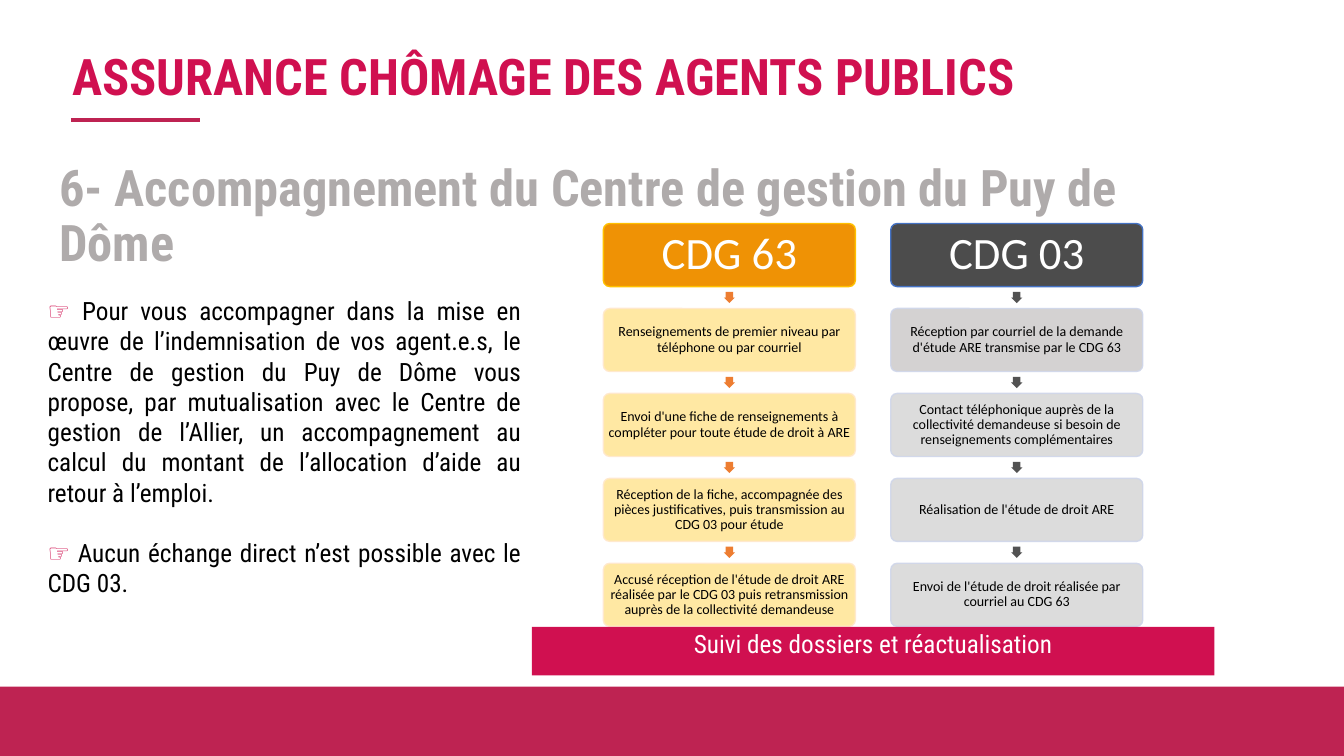
from pptx import Presentation
from pptx.dml.color import RGBColor
from pptx.enum.shapes import MSO_CONNECTOR as CONN, MSO_SHAPE as SHAPE
from pptx.enum.text import MSO_ANCHOR as ANCHOR, MSO_AUTO_SIZE as AUTO, PP_ALIGN as ALIGN
from pptx.oxml.ns import qn
from pptx.util import Pt
from lxml.etree import SubElement

WHITE = RGBColor(0xFF, 0xFF, 0xFF)
BLACK = RGBColor(0, 0, 0)
CRIMSON = RGBColor(0xD0, 0x10, 0x50)
BURGUNDY = RGBColor(0xBE, 0x23, 0x52)
SILVER = RGBColor(0xAF, 0xAB, 0xAB)
ORANGE = RGBColor(0xEF, 0x92, 0x05)
GOLD = RGBColor(0xFF, 0xC0, 0x00)
RUST = RGBColor(0xED, 0x7D, 0x31)
YELLOW = RGBColor(0xFF, 0xE6, 0x99)
CREAM = RGBColor(0xFF, 0xE8, 0xCC)
CHARCOAL = RGBColor(0x4C, 0x4C, 0x4C)
BLUE = RGBColor(0x44, 0x72, 0xC4)
GRAPHITE = RGBColor(0x52, 0x52, 0x52)
ASH = RGBColor(0xD0, 0xCE, 0xCE)
GREY = RGBColor(0xD9, 0xD9, 0xD9)
MIST = RGBColor(0xCF, 0xD6, 0xEA)

ROBOTO = "Roboto Condensed"
HEADING = dict(name=ROBOTO, size=Pt(36), bold=True)
BODY = dict(name=ROBOTO, size=Pt(18))
HEAD = dict(name="Calibri", size=Pt(32))
STEP = dict(name="Calibri", size=Pt(10))
TIGHT = dict(line_spacing=0.9, space_before=Pt(0))

CDG_63 = dict(
    head="CDG 63", head_fill=ORANGE, head_line=GOLD, arrow=RUST, line=CREAM,
    steps=[
        ("Renseignements de premier niveau par téléphone ou par courriel", YELLOW),
        ("Envoi d'une fiche de renseignements à compléter pour toute étude de droit à ARE", YELLOW),
        ("Réception de la fiche, accompagnée des pièces justificatives, puis transmission au "
         "CDG 03 pour étude", YELLOW),
        ("Accusé réception de l'étude de droit ARE réalisée par le CDG 03 puis retransmission "
         "auprès de la collectivité demandeuse", YELLOW),
    ])
CDG_03 = dict(
    head="CDG 03", head_fill=CHARCOAL, head_line=BLUE, arrow=GRAPHITE, line=MIST,
    steps=[
        ("Réception par courriel de la demande d'étude ARE transmise par le CDG 63", ASH),
        ("Contact téléphonique auprès de la collectivité demandeuse si besoin de "
         "renseignements complémentaires", GREY),
        ("Réalisation de l'étude de droit ARE", GREY),
        ("Envoi de l'étude de droit réalisée par courriel au CDG 63", GREY),
    ])
SUPPORT = [
    "Pour vous accompagner dans la mise en œuvre de l’indemnisation de vos agent.e.s, le Centre "
    "de gestion du Puy de Dôme vous propose, par mutualisation avec le Centre de gestion de "
    "l’Allier, un accompagnement au calcul du montant de l’allocation d’aide au retour à l’emploi.",
    "Aucun échange direct n’est possible avec le CDG 03.",
]


def assign(target, values):
    for key, value in values.items():
        setattr(target, key, value)


def place(sp, box):
    assign(sp, dict(zip(("left", "top", "width", "height"), map(Pt, box))))


def add_run(p, text, font, color):
    r = p.add_run()
    r.text = text
    assign(r.font, font)
    r.font.color.rgb = color


def write(sp, text, font, color, align=ALIGN.LEFT, anchor=ANCHOR.TOP):
    tf = sp.text_frame
    assign(tf, dict(word_wrap=True, auto_size=AUTO.NONE, vertical_anchor=anchor))
    p = tf.paragraphs[0]
    assign(p, dict(TIGHT, alignment=align))
    add_run(p, text, font, color)


def add_block(s, kind, box, fill, line=None, alpha=None):
    sp = s.shapes.add_shape(kind, *map(Pt, box))
    sp.shadow.inherit = False
    sp.fill.solid()
    sp.fill.fore_color.rgb = fill
    if line is None:
        sp.line.fill.background()
    else:
        sp.line.color.rgb = line
        sp.line.width = Pt(1)
    if alpha:
        for clr in sp._element.spPr.iter(qn("a:srgbClr")):
            SubElement(clr, qn("a:alpha")).set("val", str(alpha * 1000))
    return sp


def add_heading(s, box):
    x, y, w, h = box
    title = s.shapes.title
    place(title, box)
    write(title, "ASSURANCE CHÔMAGE DES AGENTS PUBLICS", HEADING, CRIMSON)
    rule = s.shapes.add_connector(CONN.STRAIGHT, Pt(x + 6), Pt(y + 52), Pt(x + 98.5), Pt(y + 52))
    rule.line.color.rgb = BURGUNDY
    rule.line.width = Pt(3)
    SubElement(rule._element.spPr, qn("a:effectLst"))


def add_subtitle(s, box):
    sp = s.shapes.add_textbox(*map(Pt, box))
    write(sp, "6- Accompagnement du Centre de gestion du Puy de Dôme", HEADING, SILVER)


def add_support(s, box):
    body = s.placeholders[1]
    place(body, box)
    tf = body.text_frame
    assign(tf, dict(word_wrap=True, auto_size=AUTO.NONE, vertical_anchor=ANCHOR.TOP))
    for i, text in enumerate(SUPPORT):
        p = tf.add_paragraph() if i else tf.paragraphs[0]
        pPr = p._p.get_or_add_pPr()
        pPr.set("marL", "0")
        pPr.set("indent", "0")
        SubElement(pPr, qn("a:buNone"))
        assign(p, dict(alignment=ALIGN.JUSTIFY, space_before=Pt(21.6 if i else 0)))
        add_run(p, "☞ ", BODY, CRIMSON)
        add_run(p, text, BODY, BLACK)


def add_card(s, box, text, font, color, fill, line, inset, alpha=None):
    sp = add_block(s, SHAPE.ROUNDED_RECTANGLE, box, fill, line, alpha)
    sp.adjustments[0] = 0.1
    sides = ("margin_left", "margin_top", "margin_right", "margin_bottom")
    assign(sp.text_frame, dict.fromkeys(sides, Pt(inset)))
    write(sp, text, font, color, ALIGN.CENTER, ANCHOR.MIDDLE)


def add_chain(s, box, chain):
    x, y, w, h = box
    card_h, arrow = 45, 8
    pitch = (h - card_h) / len(chain["steps"])
    add_card(s, (x, y, w, card_h), chain["head"], HEAD, WHITE,
             chain["head_fill"], chain["head_line"], 2.9)
    for i, (text, fill) in enumerate(chain["steps"], 1):
        top = y + i * pitch
        gap_mid = top - (pitch - card_h) / 2
        sp = add_block(s, SHAPE.DOWN_ARROW,
                       (x + (w - arrow) / 2, gap_mid - arrow / 2, arrow, arrow), chain["arrow"])
        sp.adjustments[0] = 0.67
        add_card(s, (x, top, w, card_h), text, STEP, BLACK, fill, chain["line"], 0.8, 90)


def add_follow_up(s, box):
    sp = add_block(s, SHAPE.RECTANGLE, box, CRIMSON)
    write(sp, "Suivi des dossiers et réactualisation", BODY, WHITE, ALIGN.CENTER)


def main():
    prs = Presentation()
    prs.slide_width, prs.slide_height = Pt(960), Pt(540)
    s = prs.slides.add_slide(prs.slide_layouts[1])
    add_block(s, SHAPE.RECTANGLE, (0, 490.4, 960, 49.6), BURGUNDY)
    add_heading(s, (44.6, 33.8, 843, 59))
    add_subtitle(s, (35.3, 113, 821.5, 48.2))
    add_chain(s, (431, 159.7, 180, 287.7), CDG_63)
    add_chain(s, (636.3, 159.7, 180, 287.7), CDG_03)
    add_follow_up(s, (380, 447.8, 487.4, 34.6))
    add_support(s, (26.8, 207.4, 352.8, 203.8))
    prs.save("out.pptx")


if __name__ == "__main__":
    main()
